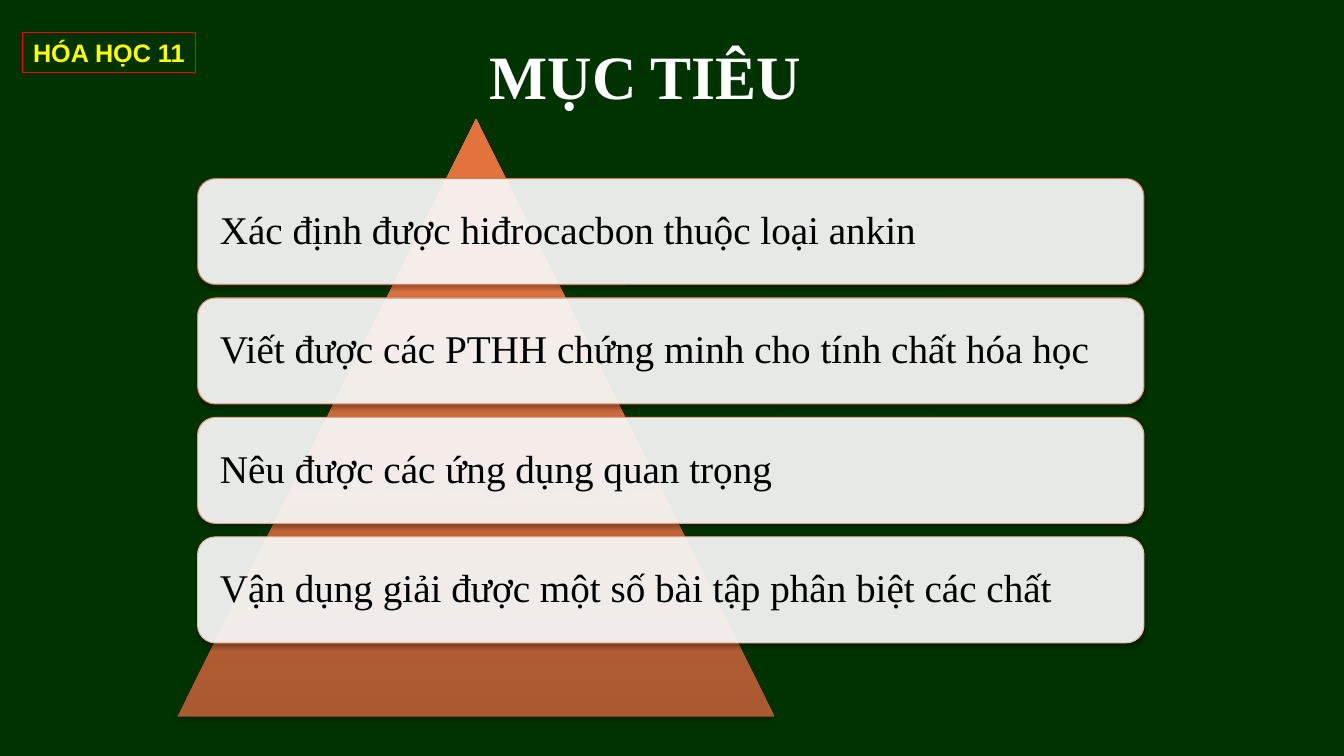
import pptx
import pptx.dml.color
import pptx.enum.shapes
import pptx.enum.text
import pptx.oxml.ns
import pptx.util
from lxml import etree
from pptx.util import Cm

RGB = pptx.dml.color.RGBColor
KIND = pptx.enum.shapes.MSO_SHAPE
ALIGN = pptx.enum.text.PP_ALIGN
MIDDLE = pptx.enum.text.MSO_ANCHOR.MIDDLE

GREEN = RGB(0x00, 0x33, 0x00)
WHITE = RGB(0xFF, 0xFF, 0xFF)
BLACK = RGB(0x00, 0x00, 0x00)
RED = RGB(0xFF, 0x00, 0x00)
YELLOW = RGB(0xFF, 0xFF, 0x00)
STOPS = [
    (0, RGB(0xAB, 0x59, 0x30)),
    (80, RGB(0xDD, 0x73, 0x3F)),
    (100, RGB(0xE2, 0x73, 0x3C)),
]
GOALS = [
    ("Xác định được hiđrocacbon thuộc loại ankin", RGB(0xD2, 0x7D, 0x53)),
    ("Viết được các PTHH chứng minh cho tính chất hóa học", RGB(0xDD, 0x90, 0x6E)),
    ("Nêu được các ứng dụng quan trọng", RGB(0xE6, 0xA3, 0x89)),
    ("Vận dụng giải được một số bài tập phân biệt các chất", RGB(0xEF, 0xB9, 0xA6)),
]
SERIF = "Times New Roman"


def node(parent, tag, **attrs):
    item = etree.SubElement(parent, pptx.oxml.ns.qn("a:" + tag))
    for key, value in attrs.items():
        item.set(key, str(value))
    return item


def put_text(shape, text, font, wrap=False, align=ALIGN.LEFT):
    frame = shape.text_frame
    frame.word_wrap = wrap
    para = frame.paragraphs[0]
    para.alignment = align
    run = para.add_run()
    run.text = text
    color = font["color"]
    for key, value in font.items():
        if key != "color":
            setattr(run.font, key, value)
    run.font.color.rgb = color
    return frame, para


def add_form(slide, kind, left, top, width, height, edge=None):
    form = slide.shapes.add_shape(kind, Cm(left), Cm(top), Cm(width), Cm(height))
    form.shadow.inherit = False
    if edge is None:
        form.line.fill.background()
    else:
        form.line.color.rgb = edge
        form.line.width = pptx.util.Pt(0.75)
    return form


def add_shade(form):
    effects = form._element.spPr.find(pptx.oxml.ns.qn("a:effectLst"))
    shade = node(effects, "outerShdw", blurRad=40000, dist=23000,
                 dir=5400000, rotWithShape=0)
    node(node(shade, "srgbClr", val=BLACK), "alpha", val=35000)


def add_peak(slide):
    peak = add_form(slide, KIND.ISOSCELES_TRIANGLE, 4.47, 3, 15.06, 15.06)
    peak.fill.gradient()
    peak.fill.gradient_angle = 90
    stops = peak._element.spPr.find(".//" + pptx.oxml.ns.qn("a:gsLst"))
    stops.clear()
    for place, color in STOPS:
        node(node(stops, "gs", pos=place * 1000), "srgbClr", val=color)
    add_shade(peak)


def add_card(slide, top, text, edge):
    card = add_form(slide, KIND.ROUNDED_RECTANGLE, 4.98, top, 23.85, 2.67, edge)
    card.fill.solid()
    card.fill.fore_color.rgb = WHITE
    tint = card._element.spPr.find(
        pptx.oxml.ns.qn("a:solidFill") + "/" + pptx.oxml.ns.qn("a:srgbClr"))
    node(tint, "alpha", val=90000)
    add_shade(card)
    font = {"name": SERIF, "size": pptx.util.Pt(28), "color": BLACK}
    frame, para = put_text(card, text, font, wrap=True)
    para.line_spacing = 0.9
    inset = {"margin_left": Cm(0.43), "margin_right": Cm(0.43),
             "vertical_anchor": MIDDLE}
    for key, value in inset.items():
        setattr(frame, key, value)


def add_title(slide):
    box = slide.shapes.add_textbox(Cm(12.09), Cm(0.84), Cm(8.46), Cm(2.13))
    font = {"name": SERIF, "size": pptx.util.Pt(44), "bold": True, "color": WHITE}
    put_text(box, "MỤC TIÊU", font)


def add_tag(slide):
    tag = add_form(slide, KIND.RECTANGLE, 0.56, 0.81, 4.37, 1.02, RED)
    tag.fill.background()
    font = {"name": "Arial", "size": pptx.util.Pt(18), "bold": True, "color": YELLOW}
    put_text(tag, "HÓA HỌC 11", font, align=ALIGN.CENTER)


def main():
    deck = pptx.Presentation()
    deck.slide_width, deck.slide_height = Cm(33.87), Cm(19.05)
    slide = deck.slides.add_slide(deck.slide_layouts[6])
    slide.background.fill.solid()
    slide.background.fill.fore_color.rgb = GREEN
    add_title(slide)
    add_peak(slide)
    for index, (text, edge) in enumerate(GOALS):
        add_card(slide, 4.5 + 3.01 * index, text, edge)
    add_tag(slide)
    deck.save("out.pptx")


if __name__ == "__main__":
    main()
